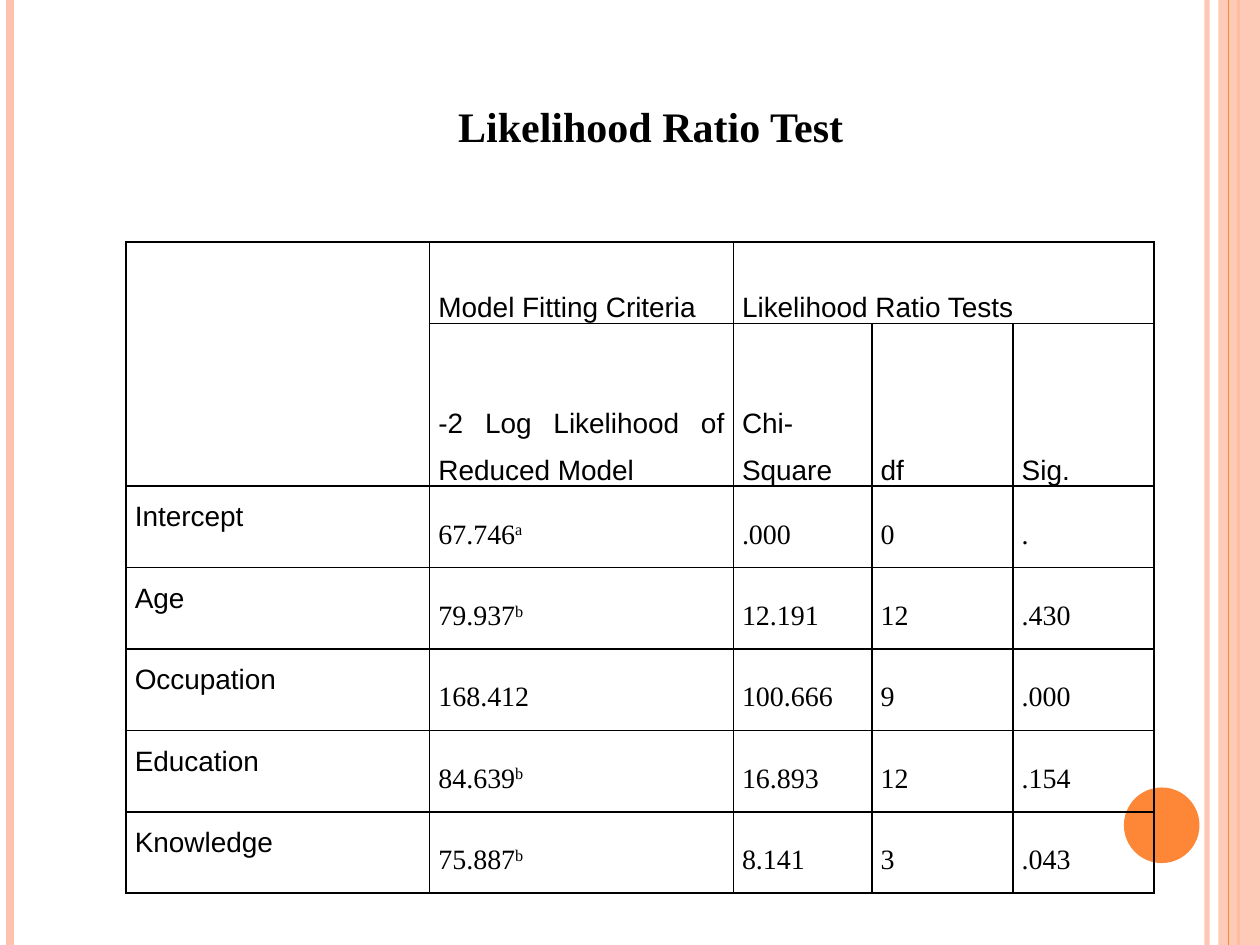
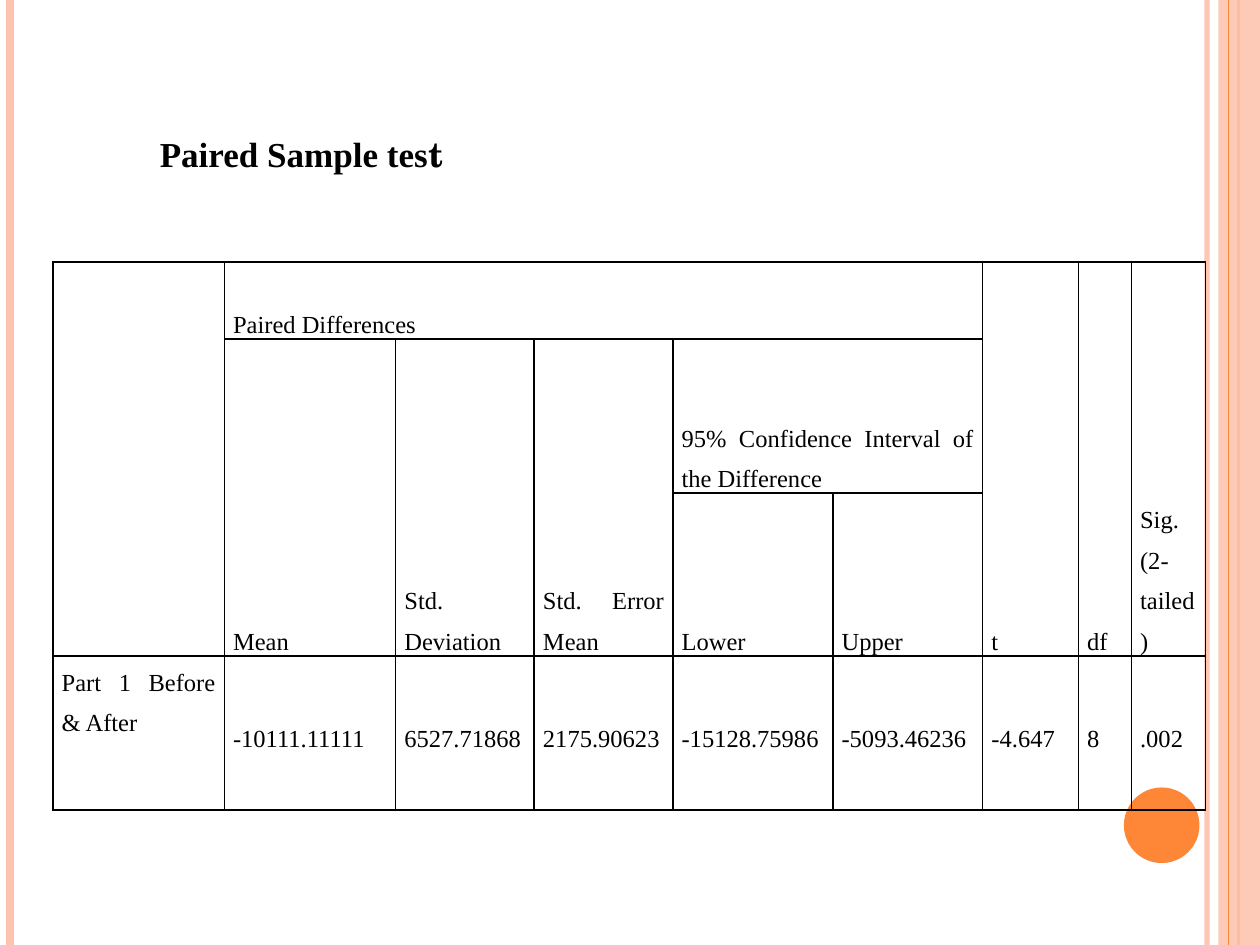
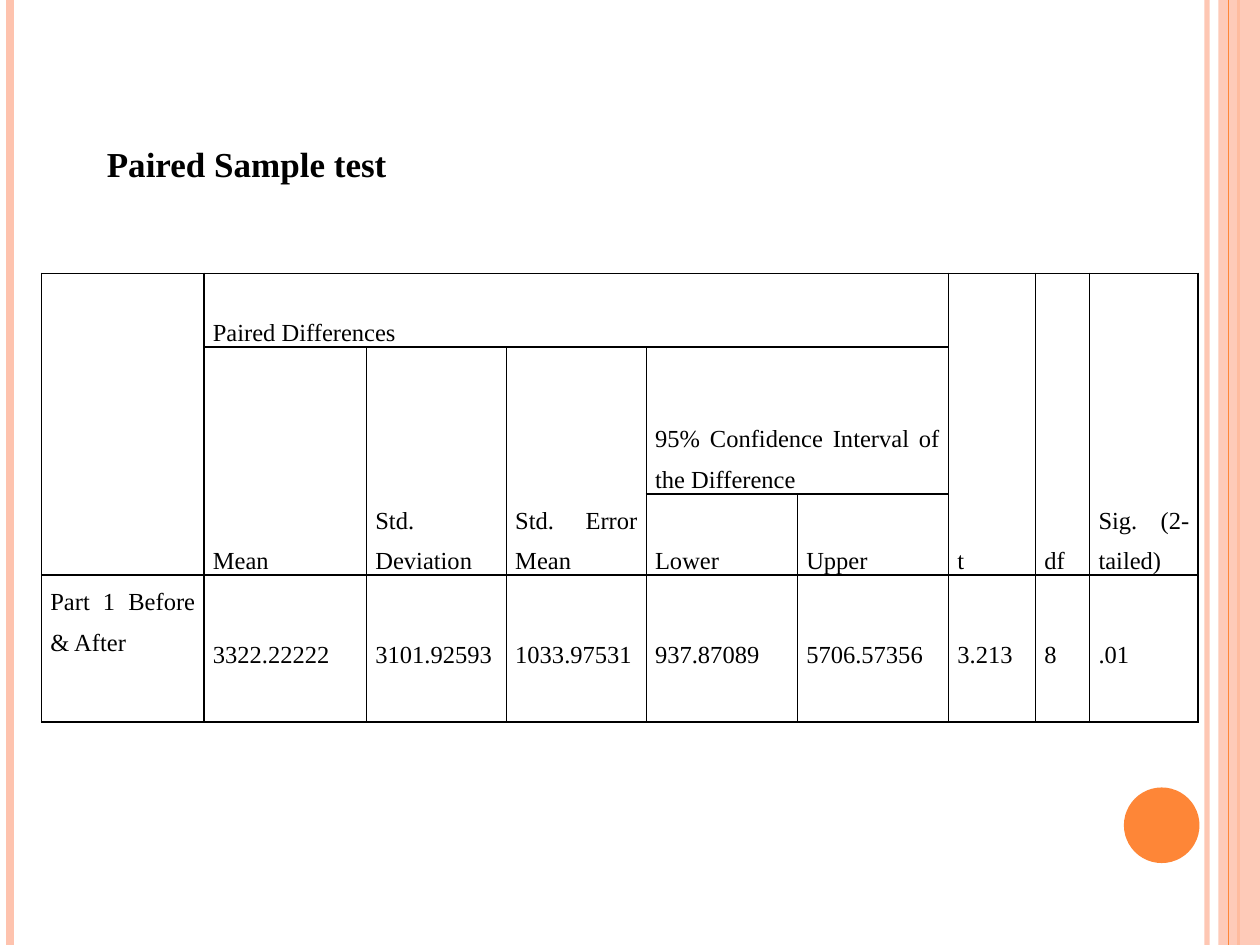
import dataclasses

import lxml.etree
import pptx
import pptx.dml.color
import pptx.enum.shapes
import pptx.enum.text
import pptx.oxml
import pptx.oxml.ns
import pptx.util

Inches = pptx.util.Inches
Pt = pptx.util.Pt
qn = pptx.oxml.ns.qn
Align = pptx.enum.text.PP_ALIGN
Anchor = pptx.enum.text.MSO_ANCHOR
Shape = pptx.enum.shapes.MSO_SHAPE


@dataclasses.dataclass(frozen=True)
class Theme:
    peach: str = "FEC3AE"
    orange: str = "FE8637"
    ink: str = "000000"
    serif: str = "Times New Roman"
    sans: str = "Arial"
    school: str = "TeX Gyre Schola"
    big: int = 24
    mid: int = 20
    cell: int = 16
    small: int = 14
    rule: int = 1


THEME = Theme()
WIDE, HIGH = 10, 7.5

RULES = [
    (9.58, THEME.peach, 3, 93),
    (0.08, THEME.peach, 4.5, 100),
    (9.83, THEME.orange, 1.5, 100),
]
EDGE = (9.75, THEME.orange, 0.75, 100)
BAND = (9.67, 0, 0.33, HIGH)
DOT = (8.92, 6.25, 0.6, 0.6)

RATIO = [
    [None, "Model Fitting Criteria", "Likelihood Ratio Tests", None, None],
    [None, "-2 Log Likelihood of Reduced Model", "Chi-Square", "df", "Sig."],
    ["Intercept", ("67.746", "a"), ".000", "0", "."],
    ["Age", ("79.937", "b"), "12.191", "12", ".430"],
    ["Occupation", "168.412", "100.666", "9", ".000"],
    ["Education", ("84.639", "b"), "16.893", "12", ".154"],
    ["Knowledge", ("75.887", "b"), "8.141", "3", ".043"],
]
RATIO_SPANS = {(0, 0): (2, 1), (0, 2): (1, 3)}

PAIR_HEAD = [
    [None, "Paired Differences", None, None, None, None, "t", "df", "Sig. (2-tailed)"],
    [None, "Mean", "Std. Deviation", "Std. Error Mean",
     "95% Confidence Interval of the Difference", None, None, None, None],
    [None, None, None, None, "Lower", "Upper", None, None, None],
]
PAIR_SPANS = {(0, 0): (3, 1), (0, 1): (1, 5), (1, 4): (1, 2)}
PAIR_SPANS.update({(0, col): (3, 1) for col in (6, 7, 8)})
PAIR_SPANS.update({(1, col): (2, 1) for col in (1, 2, 3)})
PAIR_ROWS = (1, 2, 1, 2)

FIRST = ["Part 1 Before & After", "-10111.11111", "6527.71868", "2175.90623",
         "-15128.75986", "-5093.46236", "-4.647", "8", ".002"]
SECOND = ["Part 1 Before & After", "3322.22222", "3101.92593", "1033.97531",
          "937.87089", "5706.57356", "3.213", "8", ".01"]

SLIDES = [
    dict(
        title=dict(parts=[("Likelihood Ratio Test", THEME.serif)], size=THEME.big,
                   box=(2.5, 0.75, 5.33, 0.5), align=Align.CENTER),
        table=dict(grid=RATIO, spans=RATIO_SPANS, heads=2, label=THEME.sans,
                   size=THEME.cell, spot=(1, 1.92), high=5.17,
                   cols=(2.41, 2.41, 1.1, 1.12, 1.12), rows=(1, 2, 1, 1, 1, 1, 1)),
    ),
    dict(
        title=dict(parts=[("Paired Sample tes", THEME.serif), ("t", THEME.school)],
                   size=THEME.mid, box=(1.17, 1, 2.45, 0.44), wrap=False),
        table=dict(grid=PAIR_HEAD + [FIRST], spans=PAIR_SPANS, heads=3,
                   label=THEME.serif, size=THEME.small, spot=(0.42, 2.08), high=3.67,
                   cols=(1.36, 1.36, 1.1, 1.1, 1.27, 1.19, 0.76, 0.42, 0.59),
                   rows=PAIR_ROWS),
    ),
    dict(
        title=dict(parts=[("Paired Sample test", THEME.serif)], size=THEME.mid,
                   box=(0.75, 1.08, 5.17, 0.44)),
        table=dict(grid=PAIR_HEAD + [SECOND], spans=PAIR_SPANS, heads=3,
                   label=THEME.serif, size=THEME.small, spot=(0.33, 2.17), high=3.5,
                   cols=(1.29, 1.29, 1.11, 1.11, 1.2, 1.2, 0.69, 0.43, 0.86),
                   rows=PAIR_ROWS),
    ),
]


def tint(code):
    return pptx.dml.color.RGBColor.from_string(code)


def fade(shape, share):
    if share < 100:
        for node in shape._element.spPr.iter(qn("a:srgbClr")):
            lxml.etree.SubElement(node, qn("a:alpha"), val=str(share * 1000))


def add_rule(slide, left, color, width, share):
    line = slide.shapes.add_connector(
        pptx.enum.shapes.MSO_CONNECTOR.STRAIGHT,
        Inches(left), 0, Inches(left), Inches(HIGH))
    line.line.color.rgb = tint(color)
    line.line.width = Pt(width)
    fade(line, share)
    lxml.etree.SubElement(line._element.spPr, qn("a:effectLst"))


def add_block(slide, kind, box, color, share=100):
    block = slide.shapes.add_shape(kind, *map(Inches, box))
    block.shadow.inherit = False
    block.fill.solid()
    block.fill.fore_color.rgb = tint(color)
    block.line.fill.background()
    fade(block, share)


def add_frame(slide):
    for rule in RULES:
        add_rule(slide, *rule)
    add_block(slide, Shape.RECTANGLE, BAND, THEME.peach, 87)
    add_rule(slide, *EDGE)
    add_block(slide, Shape.OVAL, DOT, THEME.orange)


def style(font, size, name=None, bold=False):
    font.size = Pt(size)
    font.bold = bold
    font.color.rgb = tint(THEME.ink)
    if name:
        font.name = name


def add_title(slide, parts, size, box, align=Align.LEFT, wrap=True):
    frame = slide.shapes.add_textbox(*map(Inches, box)).text_frame
    frame.word_wrap = wrap
    frame.auto_size = pptx.enum.text.MSO_AUTO_SIZE.SHAPE_TO_FIT_TEXT
    para = frame.paragraphs[0]
    para.alignment = align
    style(para.font, size, bold=True)
    for text, name in parts:
        run = para.add_run()
        run.text = text
        run.font.name = name


def outline(cell):
    props = cell._tc.get_or_add_tcPr()
    for side in ("lnL", "lnR", "lnT", "lnB"):
        edge = lxml.etree.SubElement(props, qn("a:" + side), w=str(Pt(THEME.rule)))
        fill = lxml.etree.SubElement(edge, qn("a:solidFill"))
        lxml.etree.SubElement(fill, qn("a:srgbClr"), val=THEME.ink)


def write(cell, text, size, name):
    para = cell.text_frame.paragraphs[0]
    para.alignment = Align.JUSTIFY
    para.line_spacing = 1.5
    style(para.font, size, name)
    main, mark = text if isinstance(text, tuple) else (text, None)
    para.add_run().text = main
    if mark:
        run = para.add_run()
        run.text = mark
        run._r.get_or_add_rPr().set("baseline", "30000")


def add_grid(slide, grid, spans, heads, label, size, spot, high, cols, rows):
    left, top = spot
    table = slide.shapes.add_table(
        len(rows), len(cols), Inches(left), Inches(top),
        Inches(sum(cols)), Inches(high)).table
    table.first_row = table.horz_banding = False
    for col, width in zip(table.columns, cols):
        col.width = Inches(width)
    for row, share in zip(table.rows, rows):
        row.height = Inches(high * share / sum(rows))
    for r, line in enumerate(grid):
        for c, text in enumerate(line):
            cell = table.cell(r, c)
            cell.margin_left = cell.margin_right = Inches(0.07)
            cell.margin_top = cell.margin_bottom = 0
            outline(cell)
            cell.fill.background()
            if text is None:
                continue
            head = r < heads
            cell.vertical_anchor = (
                Anchor.BOTTOM if head else Anchor.MIDDLE if c else Anchor.TOP)
            write(cell, text, size, label if head or c == 0 else THEME.serif)
    for (r, c), (down, over) in spans.items():
        table.cell(r, c).merge(table.cell(r + down - 1, c + over - 1))


def main():
    deck = pptx.Presentation()
    deck.slide_width, deck.slide_height = Inches(WIDE), Inches(HIGH)
    for page in SLIDES:
        slide = deck.slides.add_slide(deck.slide_layouts[6])
        add_frame(slide)
        add_grid(slide, **page["table"])
        add_title(slide, **page["title"])
    deck.save("out.pptx")


if __name__ == "__main__":
    main()
